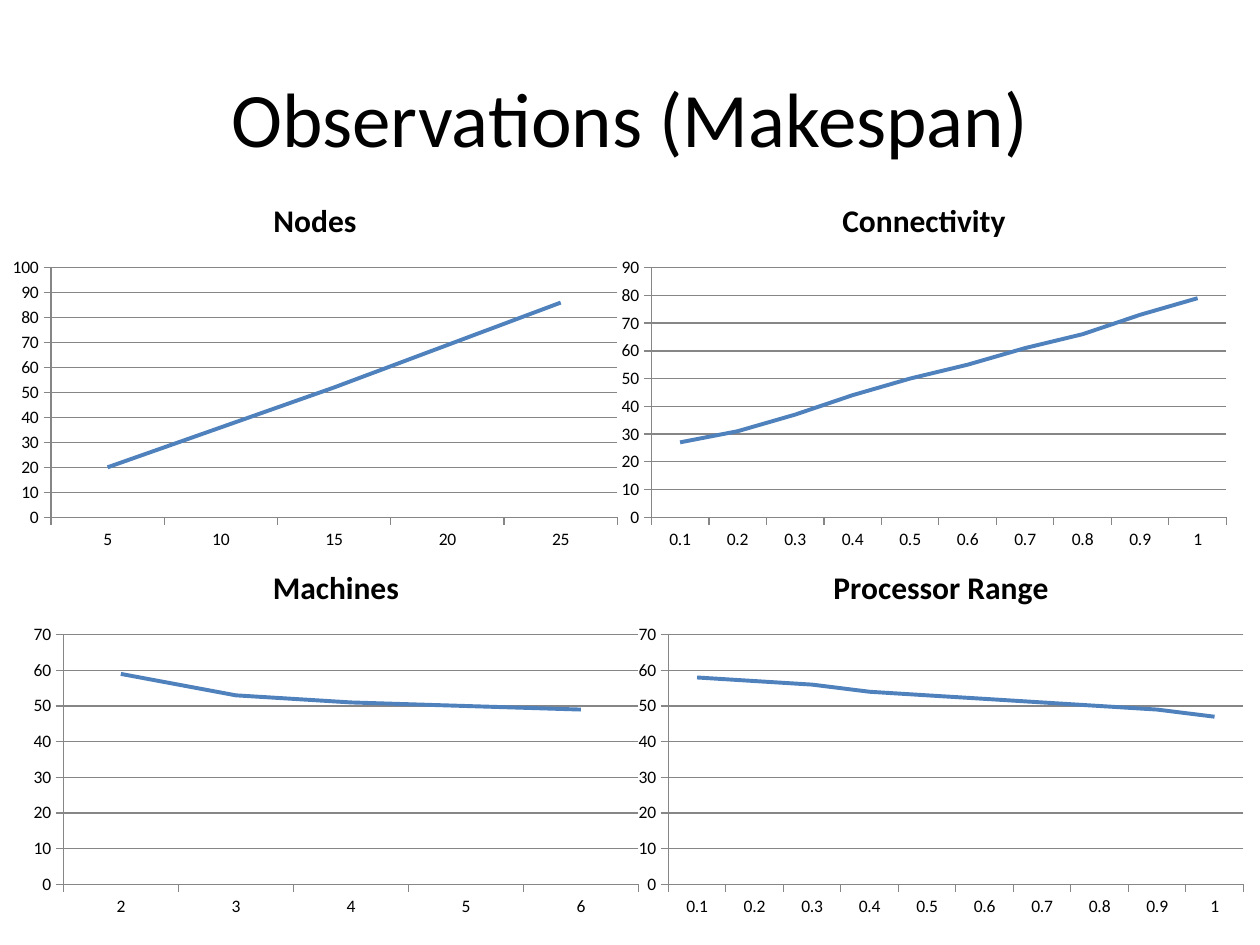
import pptx
import pptx.chart.data
import pptx.dml.color
import pptx.enum.chart
import pptx.enum.text
import pptx.util

PX = 914400 / 126


def px(length):
    return pptx.util.Emu(round(length * PX))


def color(value):
    return pptx.dml.color.RGBColor.from_string(value)


class ChartSlide:
    font_name = "Calibri"
    text_color = "000000"
    series_color = "4F81BD"
    axis_color = "868686"

    def __init__(self, presentation):
        self.slide = presentation.slides.add_slide(presentation.slide_layouts[6])

    def style_font(self, font, size, bold=False):
        font.name = self.font_name
        font.size = pptx.util.Pt(size)
        font.bold = bold
        font.color.rgb = color(self.text_color)

    def add_run(self, paragraph, text, size, bold=False):
        run = paragraph.add_run()
        run.text = text
        self.style_font(run.font, size, bold)

    def style_line(self, line, value, width):
        line.color.rgb = color(value)
        line.width = pptx.util.Pt(width)

    def heading(self, text, left, top, width, height):
        shape = self.slide.shapes.add_textbox(px(left), px(top), px(width), px(height))
        frame = shape.text_frame
        frame.word_wrap = True
        frame.vertical_anchor = pptx.enum.text.MSO_ANCHOR.MIDDLE
        paragraph = frame.paragraphs[0]
        paragraph.alignment = pptx.enum.text.PP_ALIGN.CENTER
        self.add_run(paragraph, text, 44)

    def line_chart(self, title, left, top, width, height, categories, values, maximum):
        data = pptx.chart.data.CategoryChartData()
        data.categories = categories
        data.add_series("Series 1", values)
        chart = self.slide.shapes.add_chart(
            pptx.enum.chart.XL_CHART_TYPE.LINE,
            px(left), px(top), px(width), px(height), data,
        ).chart
        self.style_font(chart.font, 10)
        chart.has_legend = False
        chart.has_title = True
        self.add_run(chart.chart_title.text_frame.paragraphs[0], title, 18, True)
        chart.chart_title.include_in_layout = False

        for axis in (chart.category_axis, chart.value_axis):
            axis.major_tick_mark = pptx.enum.chart.XL_TICK_MARK.OUTSIDE
            axis.minor_tick_mark = pptx.enum.chart.XL_TICK_MARK.NONE
            self.style_line(axis.format.line, self.axis_color, 0.75)
        value_axis = chart.value_axis
        value_axis.minimum_scale = 0
        value_axis.maximum_scale = maximum
        value_axis.major_unit = 10
        value_axis.has_major_gridlines = True
        self.style_line(value_axis.major_gridlines.format.line, self.axis_color, 0.75)

        plot = chart.plots[0]
        plot.vary_by_categories = False
        series = plot.series[0]
        series.smooth = False
        series.marker.style = pptx.enum.chart.XL_MARKER_STYLE.NONE
        self.style_line(series.format.line, self.series_color, 2.25)


def main():
    presentation = pptx.Presentation()
    presentation.slide_width = px(1260)
    presentation.slide_height = px(945)

    slide = ChartSlide(presentation)
    slide.heading("Observations (Makespan)", 63, 38, 1134, 158)

    nodes = ["5", "10", "15", "20", "25"]
    machines = ["2", "3", "4", "5", "6"]
    tenths = [f"{step / 10:g}" for step in range(1, 11)]
    upper, lower = 179, 546
    charts = [
        ("Nodes", 0, upper, nodes, [20, 36, 52, 69, 86], 100),
        ("Connectivity", 609, upper, tenths,
         [27, 31, 37, 44, 50, 55, 61, 66, 73, 79], 90),
        ("Machines", 21, lower, machines, [59, 53, 51, 50, 49], 70),
        ("Processor Range", 626, lower, tenths,
         [58, 57, 56, 54, 53, 52, 51, 50, 49, 47], 70),
    ]
    for title, left, top, categories, values, maximum in charts:
        slide.line_chart(title, left, top, 630, 378, categories, values, maximum)

    presentation.save("out.pptx")


if __name__ == "__main__":
    main()
